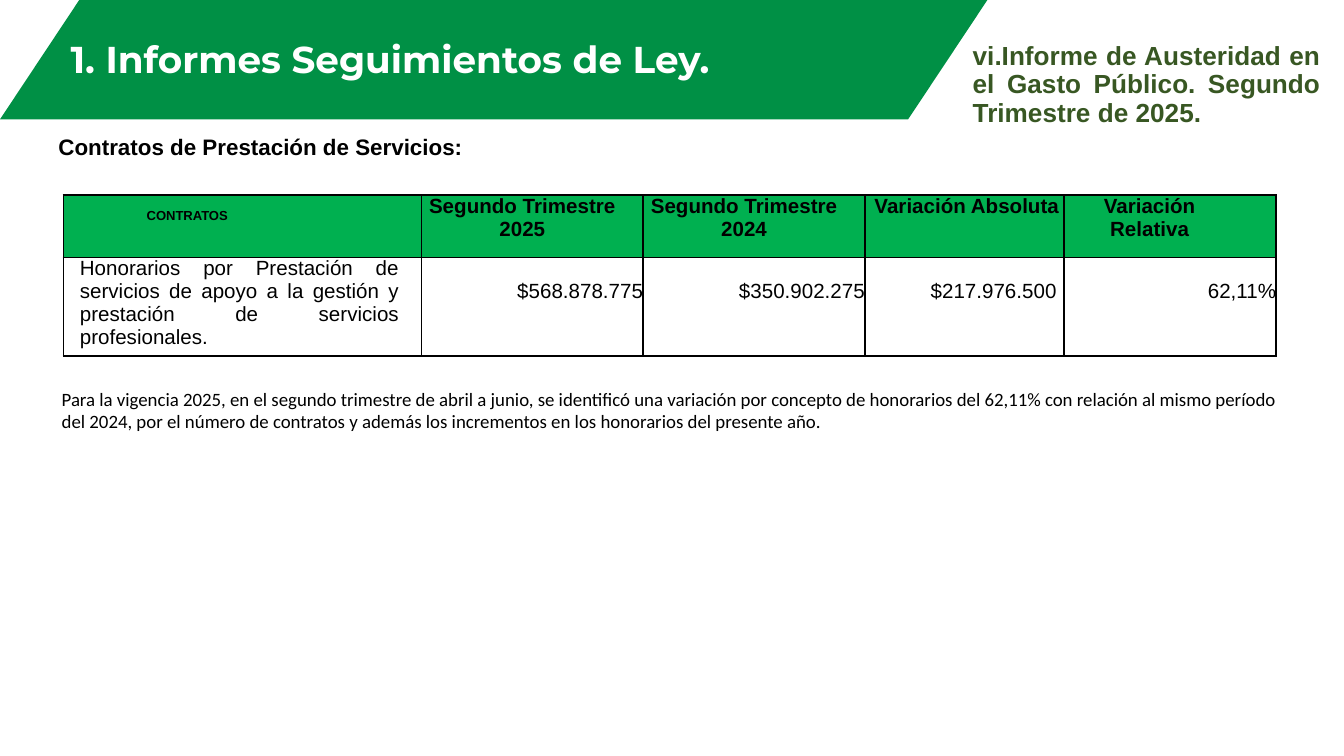
from typing import NamedTuple

from lxml.etree import SubElement
from pptx import Presentation
from pptx.dml.color import RGBColor
from pptx.enum.shapes import MSO_SHAPE as Shape
from pptx.enum.text import MSO_ANCHOR as Anchor, MSO_AUTO_SIZE as AutoSize, PP_ALIGN as Align
from pptx.oxml.ns import qn
from pptx.util import Pt

COLORS = {
    "banner": "009045",
    "header": "00B050",
    "topic": "385723",
    "white": "FFFFFF",
    "black": "000000",
}


class Style(NamedTuple):
    size: float
    font: str = "Arial"
    color: str = "black"
    bold: bool = False
    align: Align = Align.LEFT
    spacing: float = 1.0


class Block(NamedTuple):
    text: str
    left: float
    top: float
    width: float
    height: float
    style: Style


class Entry(NamedTuple):
    """Table cell; the margins are in points."""
    text: str
    style: Style
    left: float = 0
    right: float = 0
    top: float = 0


HEADING = Style(11, bold=True, align=Align.CENTER)
AMOUNT = Style(11, align=Align.RIGHT)

TITLE = Block("1. Informes Seguimientos de Ley.", 0, 16.5, 418, 31,
              Style(20, "Montserrat", "white", True, Align.CENTER, 0.9))
BLOCKS = [
    Block("vi.Informe de Austeridad en el Gasto Público. Segundo Trimestre de 2025.",
          514, 19.5, 200.5, 53, Style(14, color="topic", bold=True, align=Align.JUSTIFY, spacing=0.9)),
    Block("Contratos de Prestación de Servicios:", 24.2, 68, 240, 22,
          Style(12, bold=True, align=Align.JUSTIFY)),
    Block("Para la vigencia 2025, en el segundo trimestre de abril a junio, se identificó "
          "una variación por concepto de honorarios del 62,11% con relación al mismo período "
          "del 2024, por el número de contratos y además los incrementos en los honorarios "
          "del presente año.", 26, 204, 679, 32, Style(10.1, "Calibri")),
]

COLUMN_WIDTHS = [191.8, 118.8, 118.8, 106.7, 113.6]
ROW_HEIGHTS = [33.4, 52.6]
CONTRACTS = [
    [
        Entry("CONTRATOS", Style(7, bold=True), left=44.6, top=7.5),
        Entry("Segundo Trimestre 2025", HEADING, right=10.7),
        Entry("Segundo Trimestre 2024", HEADING, right=10.7),
        Entry("Variación Absoluta", HEADING, left=2.5),
        Entry("Variación Relativa", HEADING, left=2, right=24),
    ],
    [
        Entry("Honorarios por Prestación de servicios de apoyo a la gestión y prestación "
              "de servicios profesionales.", Style(11, align=Align.JUSTIFY), left=8.8, right=12),
        Entry("$568.878.775", AMOUNT, top=12),
        Entry("$350.902.275", AMOUNT, top=12),
        Entry("$217.976.500", AMOUNT, right=4, top=12),
        Entry("62,11%", AMOUNT, top=12),
    ],
]


def rgb(name: str) -> RGBColor:
    return RGBColor.from_string(COLORS[name])


def write(frame, text: str, style: Style) -> None:
    frame.text = text
    frame.word_wrap = True
    paragraph = frame.paragraphs[0]
    paragraph.alignment = style.align
    paragraph.line_spacing = style.spacing
    font = paragraph.runs[0].font
    font.name = style.font
    font.size = Pt(style.size)
    font.bold = style.bold
    font.color.rgb = rgb(style.color)


def add_block(slide, block: Block) -> None:
    box = slide.shapes.add_textbox(
        Pt(block.left), Pt(block.top), Pt(block.width), Pt(block.height))
    write(box.text_frame, block.text, block.style)


def add_banner(slide) -> None:
    """Draw the green band and set the slide title over it."""
    banner = slide.shapes.add_shape(Shape.PARALLELOGRAM, 0, 0, Pt(529), Pt(64))
    banner.adjustments[0] = 0.664
    banner.shadow.inherit = False
    banner.fill.solid()
    banner.fill.fore_color.rgb = rgb("banner")
    banner.line.fill.background()

    title = slide.shapes.title
    title._element.addprevious(banner._element)
    title.left, title.top = Pt(TITLE.left), Pt(TITLE.top)
    title.width, title.height = Pt(TITLE.width), Pt(TITLE.height)
    write(title.text_frame, TITLE.text, TITLE.style)
    title.text_frame.auto_size = AutoSize.NONE
    title.text_frame.vertical_anchor = Anchor.BOTTOM


def add_borders(cell) -> None:
    properties = cell._tc.get_or_add_tcPr()
    for side in ("a:lnL", "a:lnR", "a:lnT", "a:lnB"):
        line = SubElement(properties, qn(side), w=str(Pt(1)))
        fill = SubElement(line, qn("a:solidFill"))
        SubElement(fill, qn("a:srgbClr"), val=COLORS["black"])


def fill_cell(cell, entry: Entry, is_header: bool) -> None:
    write(cell.text_frame, entry.text, entry.style)
    cell.margin_left, cell.margin_right = Pt(entry.left), Pt(entry.right)
    cell.margin_top, cell.margin_bottom = Pt(entry.top), 0
    cell.vertical_anchor = Anchor.TOP
    add_borders(cell)
    if is_header:
        cell.fill.solid()
        cell.fill.fore_color.rgb = rgb("header")
    else:
        cell.fill.background()


def add_contracts(slide) -> None:
    table = slide.shapes.add_table(
        len(ROW_HEIGHTS), len(COLUMN_WIDTHS), Pt(34), Pt(104.5),
        Pt(sum(COLUMN_WIDTHS)), Pt(sum(ROW_HEIGHTS))).table
    table.first_row = table.horz_banding = False
    for column, width in zip(table.columns, COLUMN_WIDTHS):
        column.width = Pt(width)
    for row_index, (row, height) in enumerate(zip(table.rows, ROW_HEIGHTS)):
        row.height = Pt(height)
        for cell, entry in zip(row.cells, CONTRACTS[row_index]):
            fill_cell(cell, entry, row_index == 0)


def main() -> None:
    deck = Presentation()
    deck.slide_width, deck.slide_height = Pt(720), Pt(405)
    slide = deck.slides.add_slide(deck.slide_layouts[5])
    add_banner(slide)
    for block in BLOCKS:
        add_block(slide, block)
    add_contracts(slide)
    deck.save("out.pptx")


if __name__ == "__main__":
    main()
